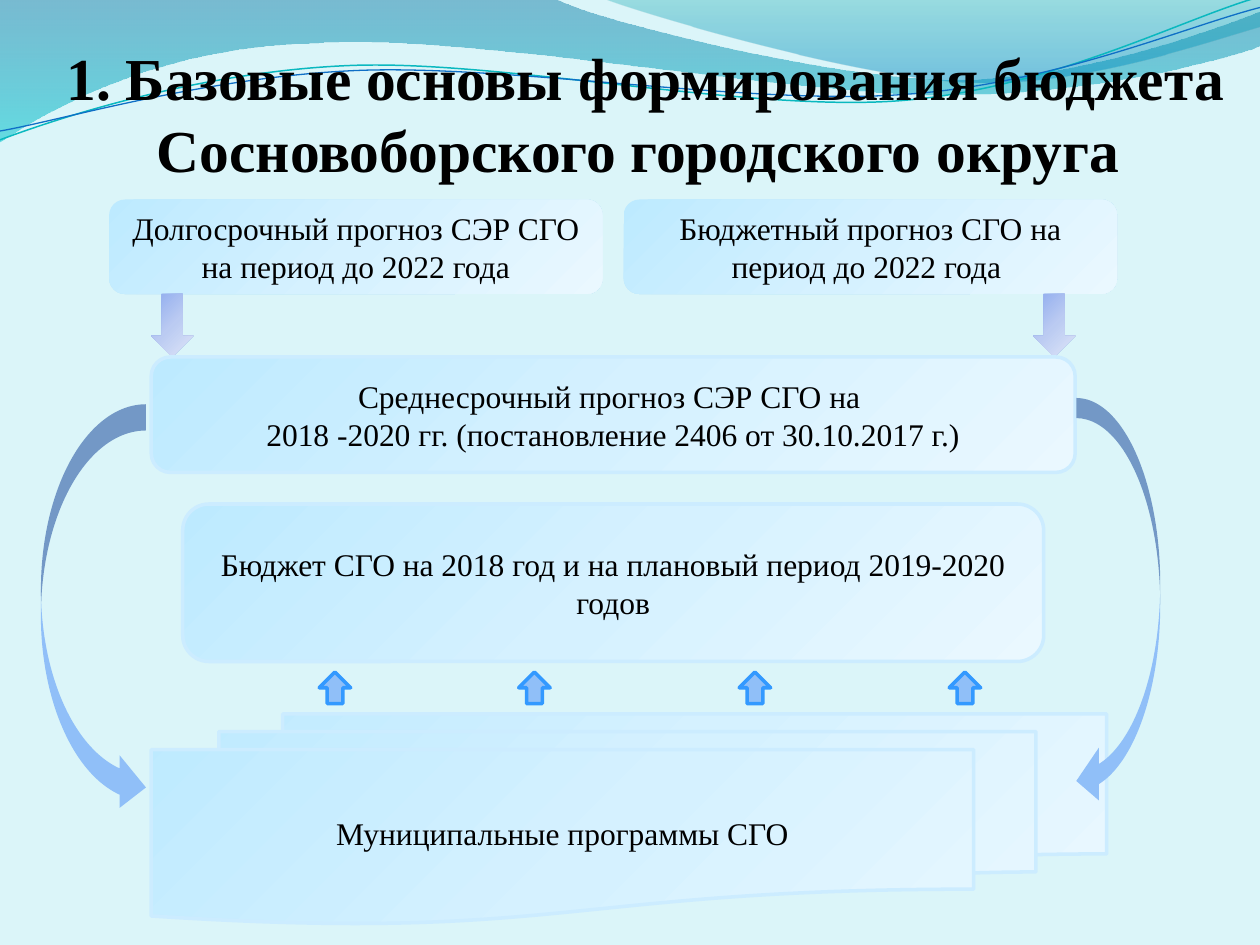
import math

from pptx import Presentation
from pptx import util as u
from pptx.dml.color import RGBColor
from pptx.enum import shapes, text
from pptx.oxml import parse_xml
from pptx.oxml.ns import nsdecls, qn

W, H = 10, 7.5
COL = W / 120  # width of a grid column
ROW = H / 90   # height of a grid row
MSO = shapes.MSO_SHAPE


class Theme:
    font = "Times New Roman"
    title_size, body_size = 34, 18
    ink, background = "000000", "DBF5F9"
    # Gradients: (position %, colour, opacity %) stops and clockwise angle
    panel = ([(0, "BDEAFF", 100), (50, "D5F1FF", 100), (100, "EAF8FF", 100)], 45)
    down = ([(0, "8EABEE", 100), (50, "BBCBF2", 100), (100, "DEE5F8", 100)], 45)
    wave_left = ([(0, "0074A1", 45), (100, "00C6CF", 55)], 90)
    wave_right = ([(0, "00A1A9", 30), (80, "008BBF", 45)], 90)
    arrow = "90BFF8"
    panel_line, arrow_line = ("CCECFF", 2), ("3399FF", 2)
    teal_line, blue_line = ("0AB8BF", 0.85), ("0F6FC6", 0.75)


def rgb(value):
    return RGBColor.from_string(value)


def paint(sp, fill=None, line=None):
    """Apply a plain colour or gradient fill, and an optional outline."""
    sp.shadow.inherit = False
    if fill is None:
        sp.fill.background()
    elif isinstance(fill, str):
        sp.fill.solid()
        sp.fill.fore_color.rgb = rgb(fill)
    else:
        stops, angle = fill
        sp.fill.gradient()
        sp.fill.gradient_angle = (360 - angle) % 360
        stop_list = sp._element.spPr.find(qn("a:gradFill")).find(qn("a:gsLst"))
        for old in list(stop_list):
            stop_list.remove(old)
        for pos, color, alpha in stops:
            opacity = f'<a:alpha val="{alpha * 1000}"/>' if alpha < 100 else ""
            stop_list.append(parse_xml(
                f'<a:gs {nsdecls("a")} pos="{pos * 1000}">'
                f'<a:srgbClr val="{color}">{opacity}</a:srgbClr></a:gs>'))
    if line:
        sp.line.color.rgb = rgb(line[0])
        sp.line.width = u.Pt(line[1])
    else:
        sp.line.fill.background()


def write(sp, lines, size, bold=False, **frame):
    """Write centred paragraphs; frame holds text frame settings."""
    tf = sp.text_frame
    settings = {"word_wrap": True, "vertical_anchor": text.MSO_ANCHOR.MIDDLE, **frame}
    for name, value in settings.items():
        setattr(tf, name, value)
    for i, line in enumerate(lines):
        p = tf.paragraphs[0] if i == 0 else tf.add_paragraph()
        p.alignment = text.PP_ALIGN.CENTER
        r = p.add_run()
        r.text = line
        for name, value in {"name": Theme.font, "size": u.Pt(size), "bold": bold}.items():
            setattr(r.font, name, value)
        r.font.color.rgb = rgb(Theme.ink)


def add_block(slide, kind, col, row, cols, rows, fill, line=None, lines=()):
    """Place a preset shape on the grid."""
    box = (u.Inches(n) for n in (col * COL, row * ROW, cols * COL, rows * ROW))
    sp = slide.shapes.add_shape(kind, *box)
    paint(sp, fill, line)
    if lines:
        write(sp, lines, Theme.body_size)
    return sp


def add_outline(slide, start, segments, fill=None, line=None):
    """Draw lines (x, y) and cubic curves (x1, y1, x2, y2, x3, y3)."""
    points = [(u.Inches(x), u.Inches(y))
              for seg in segments for x, y in zip(seg[::2], seg[1::2])]
    builder = slide.shapes.build_freeform(u.Inches(start[0]), u.Inches(start[1]))
    builder.add_line_segments(points, close=fill is not None)
    sp = builder.convert_to_shape()
    # Join each three control points into one curve
    steps = iter(list(sp._element.iter(qn("a:lnTo"))))
    for seg in segments:
        first = next(steps)
        if len(seg) == 6:
            curve = parse_xml(f'<a:cubicBezTo {nsdecls("a")}/>')
            first.addprevious(curve)
            for step in (first, next(steps), next(steps)):
                curve.append(step[0])
                step.getparent().remove(step)
    paint(sp, fill, line)
    return sp


def add_tilted_line(slide, center, start, segments, line, tilt=-2.7):
    """Draw an open curve level, then tilt it about its center into place."""
    cos, sin = math.cos(math.radians(-tilt)), math.sin(math.radians(-tilt))

    def level(seg):
        flat = []
        for x, y in zip(seg[::2], seg[1::2]):
            dx, dy = x - center[0], y - center[1]
            flat += [center[0] + dx * cos - dy * sin, center[1] + dx * sin + dy * cos]
        return flat

    sp = add_outline(slide, level(start), [level(seg) for seg in segments], line=line)
    sp.rotation = tilt


def add_waves(slide):
    add_outline(slide, (0, 0), [
        (4.4, -0.01),
        (4.76, 0.17, 6.64, 0.63, 7.58, 0.63), (8.53, 0.63, 9.58, 0.26, 10, 0.09),
        (10.01, 0.36),
        (9.83, 0.44, 8.7, 0.76, 7.46, 0.75), (6.22, 0.75, 3.82, 0.28, 2.57, 0.34),
        (1.29, 0.36, 0.46, 0.83, -0.01, 1.13), (0, 0)], Theme.wave_left)
    add_outline(slide, (4.79, -0.01), [
        (5.09, 0.11, 6.82, 0.62, 7.69, 0.65), (8.56, 0.69, 9.61, 0.32, 10, 0.21),
        (10, 0), (4.79, -0.01)], Theme.wave_right)
    add_tilted_line(slide, (4.99, 0.58), (0, 1.11), [
        (0.48, 0.93, 1.58, 0.57, 2.77, 0.52), (3.95, 0.47, 5.93, 0.89, 7.13, 0.8),
        (8.33, 0.71, 9.38, 0.15, 9.98, -0.02)], Theme.teal_line)
    add_tilted_line(slide, (5, 0.59), (0, 1.04), [
        (0.47, 0.96, 1.64, 0.61, 2.83, 0.56), (4.03, 0.51, 5.97, 0.84, 7.17, 0.75),
        (8.36, 0.67, 9.41, 0.21, 10, 0.06)], Theme.blue_line)


def add_title(slide, title):
    sp = slide.shapes.add_textbox(*(u.Inches(n) for n in (0.43, 0.21, 9.39, 1.25)))
    write(sp, [title], Theme.title_size, bold=True,
          vertical_anchor=text.MSO_ANCHOR.BOTTOM, margin_left=0, margin_right=0,
          margin_top=u.Inches(0.05), margin_bottom=0)


def main():
    prs = Presentation()
    prs.slide_width, prs.slide_height = u.Inches(W), u.Inches(H)
    slide = prs.slides.add_slide(prs.slide_layouts[6])
    slide.background.fill.solid()
    slide.background.fill.fore_color.rgb = rgb(Theme.background)

    add_waves(slide)
    add_title(slide, "1. Базовые основы формирования бюджета Сосновоборского городского округа ")

    # Long-term forecasts, then the arrows below them
    forecasts = [(10.4, "Долгосрочный прогноз СЭР СГО на период до 2022 года"),
                 (59.4, "Бюджетный прогноз СГО на период до 2022 года ")]
    for col, label in forecasts:
        add_block(slide, MSO.ROUNDED_RECTANGLE, col, 19, 47, 9, Theme.panel, lines=[label])
    for col in (14.4, 98.4):
        add_block(slide, MSO.DOWN_ARROW, col, 28, 4, 6, Theme.down)

    # Medium-term forecast, budget and programmes
    panels = [
        (MSO.ROUNDED_RECTANGLE, 14.4, 34, 88, 11,
         ["Среднесрочный прогноз СЭР СГО на ",
          "2018 -2020 гг. (постановление 2406 от 30.10.2017 г.)"]),
        (MSO.ROUNDED_RECTANGLE, 17.4, 48, 82, 15,
         ["Бюджет СГО на 2018 год и на плановый период 2019-2020", "годов"]),
        (MSO.FLOWCHART_MULTIDOCUMENT, 14.4, 68, 91, 20, ["Муниципальные программы СГО"]),
    ]
    for *place, lines in panels:
        add_block(slide, *place, Theme.panel, Theme.panel_line, lines)

    # Arrows from the programmes up to the budget
    for col in (30.4, 49.4, 70.4, 90.4):
        add_block(slide, MSO.UP_ARROW, col, 64, 3, 3, Theme.arrow, Theme.arrow_line)

    # Side arrows from the forecast to the programmes
    add_block(slide, MSO.CURVED_RIGHT_ARROW, 3.9, 38.5, 10, 39, Theme.arrow)
    side = add_block(slide, MSO.CURVED_LEFT_ARROW, 102.5, 37.9, 8, 39, Theme.arrow)
    for i, value in enumerate((0.24, 0.63, 0.27)):
        side.adjustments[i] = value

    prs.save("out.pptx")


if __name__ == "__main__":
    main()
